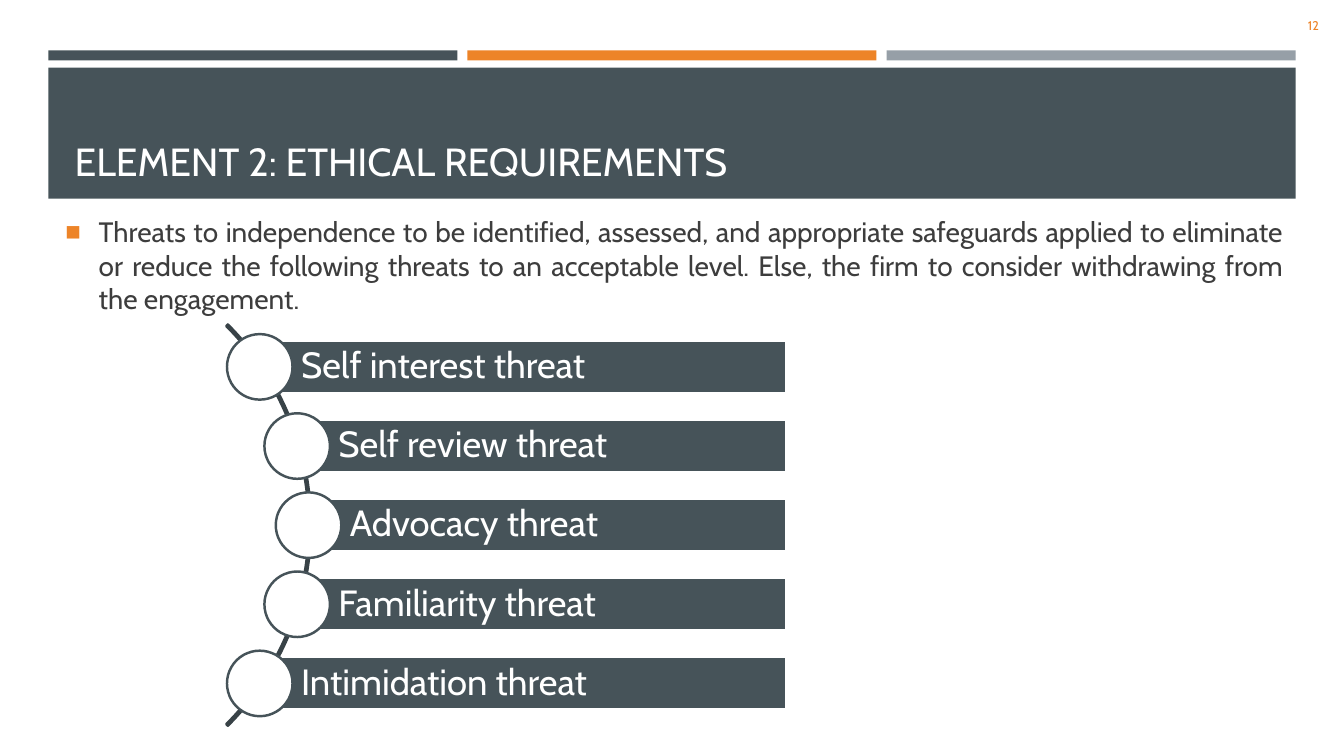
import math

import pptx
import pptx.util
import pptx.dml.color
import pptx.enum.shapes
import pptx.enum.text
import pptx.oxml.ns
import lxml.etree

Inches = pptx.util.Inches
Pt = pptx.util.Pt
KIND = pptx.enum.shapes.MSO_SHAPE
ALIGN = pptx.enum.text.PP_ALIGN
ANCHOR = pptx.enum.text.MSO_ANCHOR

FONT = "Cabin"
COLORS = {
    "slate": "465359",
    "dark": "384247",
    "orange": "ED8428",
    "gray": "969FA7",
    "ink": "3D3D3D",
    "white": "FFFFFF",
}
THREATS = [
    "Self interest threat",
    "Self review threat",
    "Advocacy threat",
    "Familiarity threat",
    "Intimidation threat",
]


def color(name):
    return pptx.dml.color.RGBColor.from_string(COLORS[name])


def place(slide, kind, box, fill=None, line=None):
    shape = slide.shapes.add_shape(kind, *map(Inches, box))
    shape.shadow.inherit = False
    if fill:
        shape.fill.solid()
        shape.fill.fore_color.rgb = color(fill)
    else:
        shape.fill.background()
    if line:
        shape.line.color.rgb = color(line)
        shape.line.width = Pt(1.75)
    else:
        shape.line.fill.background()
    return shape


def write(shape, text, size, ink, align=ALIGN.LEFT, anchor=ANCHOR.TOP,
          inset=(0.1, 0.05, 0.1, 0.05), spacing=1, before=0, after=0):
    frame = shape.text_frame
    frame.word_wrap = True
    frame.auto_size = pptx.enum.text.MSO_AUTO_SIZE.NONE
    frame.vertical_anchor = anchor
    (frame.margin_left, frame.margin_top,
     frame.margin_right, frame.margin_bottom) = map(Inches, inset)
    para = frame.paragraphs[0]
    para.alignment = align
    para.line_spacing = spacing
    para.space_before = Pt(before)
    para.space_after = Pt(after)
    run = para.add_run()
    run.text = text
    run.font.name = FONT
    run.font.size = Pt(size)
    run.font.color.rgb = color(ink)
    return para


def bullet(para, indent, ink):
    props = para._p.get_or_add_pPr()
    props.set("marL", str(Inches(indent)))
    props.set("indent", str(-Inches(indent)))
    qn = pptx.oxml.ns.qn
    tint = lxml.etree.SubElement(props, qn("a:buClr"))
    lxml.etree.SubElement(tint, qn("a:srgbClr"), val=COLORS[ink])
    lxml.etree.SubElement(props, qn("a:buSzPct"), val="92000")
    lxml.etree.SubElement(props, qn("a:buFont"), typeface="Arial")
    lxml.etree.SubElement(props, qn("a:buChar"), char="■")


def header(slide, left, top, width, height):
    gap = 0.1
    strip = (width - 2 * gap) / 3
    for i, fill in enumerate(["slate", "orange", "gray"]):
        place(slide, KIND.RECTANGLE,
              (left + i * (strip + gap), top, strip, 0.1), fill)
    band = top + 0.17
    place(slide, KIND.RECTANGLE, (left, band, width, height - 0.17), "slate")
    title = slide.shapes.title
    title.left, title.top = Inches(left + 0.16), Inches(band + 0.1)
    title.width, title.height = Inches(width - 0.31), Inches(height - 0.36)
    title.element.getparent().append(title.element)
    write(title, "ELEMENT 2: ETHICAL REQUIREMENTS", 28, "white",
          anchor=ANCHOR.BOTTOM)


def body(slide, *box):
    area = slide.shapes.add_textbox(*map(Inches, box))
    para = write(
        area,
        "Threats to independence to be identified, assessed, and appropriate "
        "safeguards applied to eliminate or reduce the following threats to "
        "an acceptable level. Else, the firm to consider withdrawing from "
        "the engagement.",
        20, "ink", align=ALIGN.JUSTIFY, before=4, after=6)
    bullet(para, 0.33, "orange")


def number(slide, *box):
    area = slide.shapes.add_textbox(*map(Inches, box))
    write(area, "12", 9, "orange", align=ALIGN.RIGHT, anchor=ANCHOR.MIDDLE)


def threats(slide, left, top, width, height):
    size = 5.63
    radius = 2.79
    pitch, bar, dot = 0.785, 0.52, 0.65
    mid = top + height / 2
    hub = left + 0.65 - radius * math.cos(math.asin(2 * pitch / radius))
    hub = round(hub, 2) - 0.32
    arc = place(slide, KIND.BLOCK_ARC,
                (hub - size / 2, mid - size / 2, size, size), line="dark")
    for i, value in enumerate([189, 27, 0.004]):
        arc.adjustments[i] = value
    for i, name in enumerate(THREATS):
        drop = (i - 2) * pitch
        x = hub + math.sqrt(radius ** 2 - drop ** 2)
        y = mid + drop
        strip = place(slide, KIND.RECTANGLE,
                      (x, y - bar / 2, left + width - x, bar),
                      "slate", "white")
        write(strip, name, 26, "white", anchor=ANCHOR.MIDDLE,
              inset=(0.41, 0.07, 0.07, 0.07), spacing=0.9, after=9.1)
        place(slide, KIND.OVAL, (x - dot / 2, y - dot / 2, dot, dot),
              "white", "slate")


def main():
    deck = pptx.Presentation()
    deck.slide_width, deck.slide_height = Inches(13.33), Inches(7.5)
    slide = deck.slides.add_slide(deck.slide_layouts[5])
    header(slide, 0.48, 0.5, 12.37, 1.47)
    body(slide, 0.55, 2.08, 12.28, 4.02)
    number(slide, 12.03, 0.05, 1.15, 0.4)
    threats(slide, 2.25, 3.22, 5.55, 3.98)
    deck.save("out.pptx")


if __name__ == "__main__":
    main()
